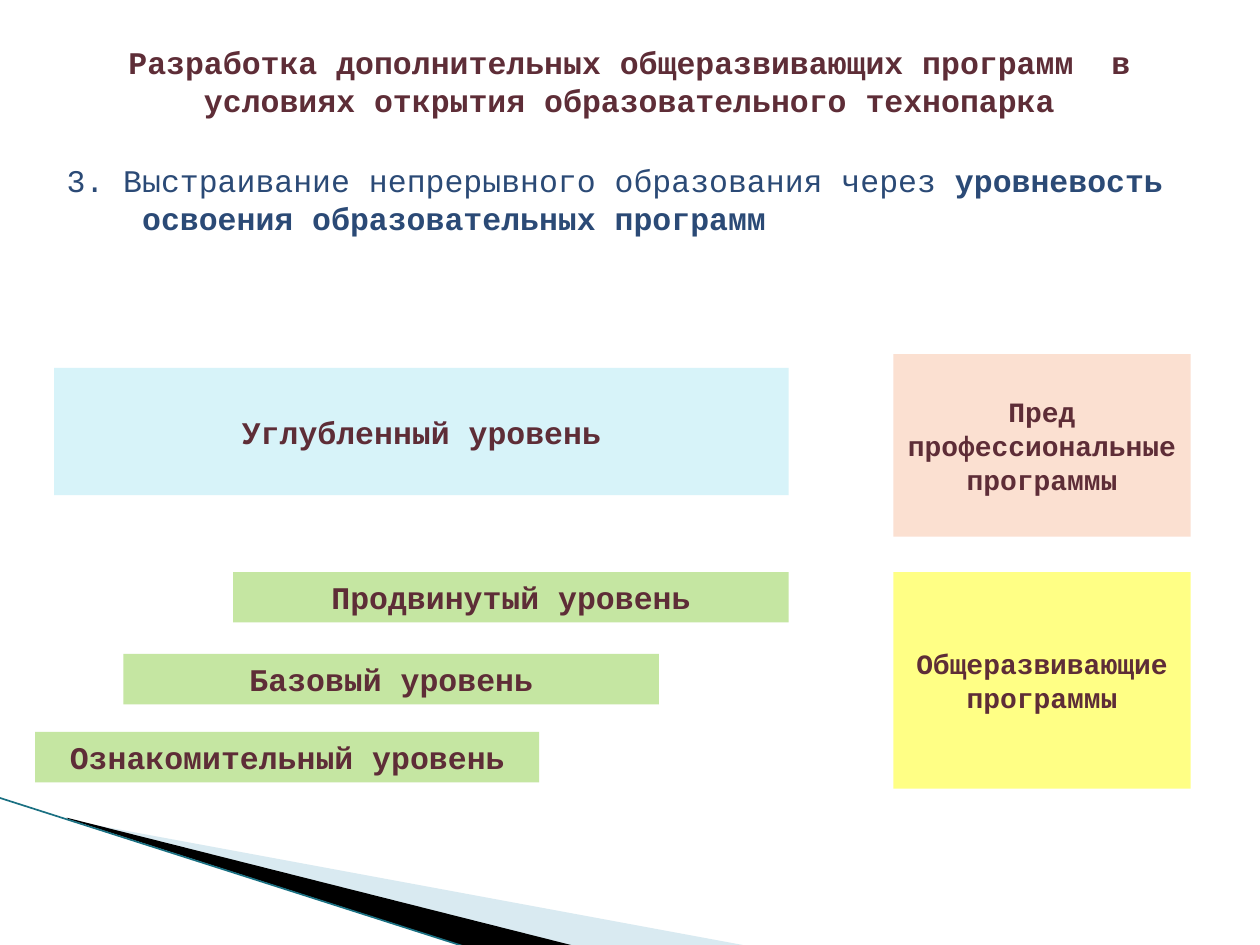
from lxml import etree
from pptx import Presentation
from pptx import util as u
from pptx.dml.color import RGBColor
from pptx.enum import shapes, text
from pptx.oxml.ns import qn

BLUE = RGBColor(0x2B, 0x4A, 0x76)
MAROON = RGBColor(0x5E, 0x2D, 0x37)
GREEN = RGBColor(0x92, 0xD0, 0x50)
CYAN = RGBColor(0xB5, 0xE9, 0xF4)
PEACH = RGBColor(0xFB, 0xE0, 0xD1)
YELLOW = RGBColor(0xFF, 0xFF, 0x00)
PALE_BLUE = RGBColor(0xA0, 0xCB, 0xDC)
BLACK = RGBColor(0, 0, 0)
TEAL = RGBColor(0x1A, 0x70, 0x82)
CENTER, JUSTIFY = text.PP_ALIGN.CENTER, text.PP_ALIGN.JUSTIFY


class Deck:
    font = "Courier New"

    def __init__(self, prs):
        self.s = prs.slides.add_slide(prs.slide_layouts[6])

    def paint(self, sp, color, alpha=100):
        sp.shadow.inherit = False
        sp.line.fill.background()
        sp.fill.solid()
        sp.fill.fore_color.rgb = color
        if alpha < 100:
            clr = sp._element.spPr.find(".//" + qn("a:srgbClr"))
            etree.SubElement(clr, qn("a:alpha"), val=str(alpha * 1000))

    def add_text(self, tf, paragraphs, color, size, align):
        """Each paragraph is (left indent in inches, [(text, bold), ...])."""
        tf.word_wrap = True
        for i, (indent, runs) in enumerate(paragraphs):
            p = tf.paragraphs[0] if i == 0 else tf.add_paragraph()
            p.alignment = align
            if indent:
                p._p.get_or_add_pPr().set("marL", str(u.Inches(indent)))
            for words, bold in runs:
                r = p.add_run()
                r.text = words
                r.font.name = self.font
                r.font.size = u.Pt(size)
                r.font.bold = bold
                r.font.color.rgb = color

    def label(self, x, y, w, h, paragraphs, color, align):
        sp = self.s.shapes.add_textbox(*map(u.Inches, (x, y, w, h)))
        self.add_text(sp.text_frame, paragraphs, color, 18, align)

    def box(self, x, y, w, h, lines, fill, alpha=100, size=18):
        sp = self.s.shapes.add_shape(shapes.MSO_SHAPE.RECTANGLE,
                                     *map(u.Inches, (x, y, w, h)))
        self.paint(sp, fill, alpha)
        sp.text_frame.vertical_anchor = text.MSO_ANCHOR.MIDDLE
        self.add_text(sp.text_frame, [(0, [(line, True)]) for line in lines],
                      MAROON, size, CENTER)

    def polygon(self, points, fill, alpha=100):
        pts = [(u.Inches(x), u.Inches(y)) for x, y in points]
        fb = self.s.shapes.build_freeform(*pts[0])
        fb.add_line_segments(pts[1:], close=True)
        self.paint(fb.convert_to_shape(), fill, alpha)

    def line(self, x1, y1, x2, y2, color, width):
        c = self.s.shapes.add_connector(shapes.MSO_CONNECTOR.STRAIGHT,
                                        *map(u.Inches, (x1, y1, x2, y2)))
        c.line.color.rgb = color
        c.line.width = u.Pt(width)
        etree.SubElement(c._element.spPr, qn("a:effectLst"))


def main():
    prs = Presentation()
    prs.slide_width, prs.slide_height = u.Inches(10), u.Inches(7.5)
    d = Deck(prs)

    # Corner decoration
    d.polygon([(0.55, 6.51), (5.95, 7.51), (4.56, 7.51), (0.55, 6.5)],
              PALE_BLUE, 40)
    d.polygon([(0.53, 6.49), (4.57, 7.51), (3.72, 7.52), (0.54, 6.5)], BLACK)
    d.line(-0.01, 6.33, 3.71, 7.52, TEAL, 0.95)

    # Thesis and title
    d.label(0.43, 1.23, 9.13, 0.71, [
        (0, [("3. Выстраивание непрерывного образования через ", False),
             ("уровневость", True)]),
        (0.6, [("освоения образовательных программ", True)]),
    ], BLUE, JUSTIFY)
    d.label(0.43, 0.29, 9.13, 0.71, [
        (0, [("Разработка дополнительных общеразвивающих программ  в условиях "
              "открытия образовательного технопарка", True)]),
    ], MAROON, CENTER)

    # Levels, from first steps upward
    for x, y, w, name in [(0.28, 5.81, 4, "Ознакомительный"),
                          (0.98, 5.19, 4.25, "Базовый"),
                          (1.85, 4.54, 4.41, "Продвинутый")]:
        d.box(x, y, w, 0.4, [name + " уровень"], GREEN, 53)
    d.box(0.43, 2.92, 5.83, 1.01, ["Углубленный уровень"], CYAN, 53)

    # Programme types
    d.box(7.09, 2.81, 2.36, 1.45, ["Пред", "профессиональные программы"],
          PEACH, size=16)
    d.box(7.09, 4.54, 2.36, 1.72, ["Общеразвивающие программы"],
          YELLOW, 48, size=16)

    prs.save("out.pptx")


if __name__ == "__main__":
    main()
